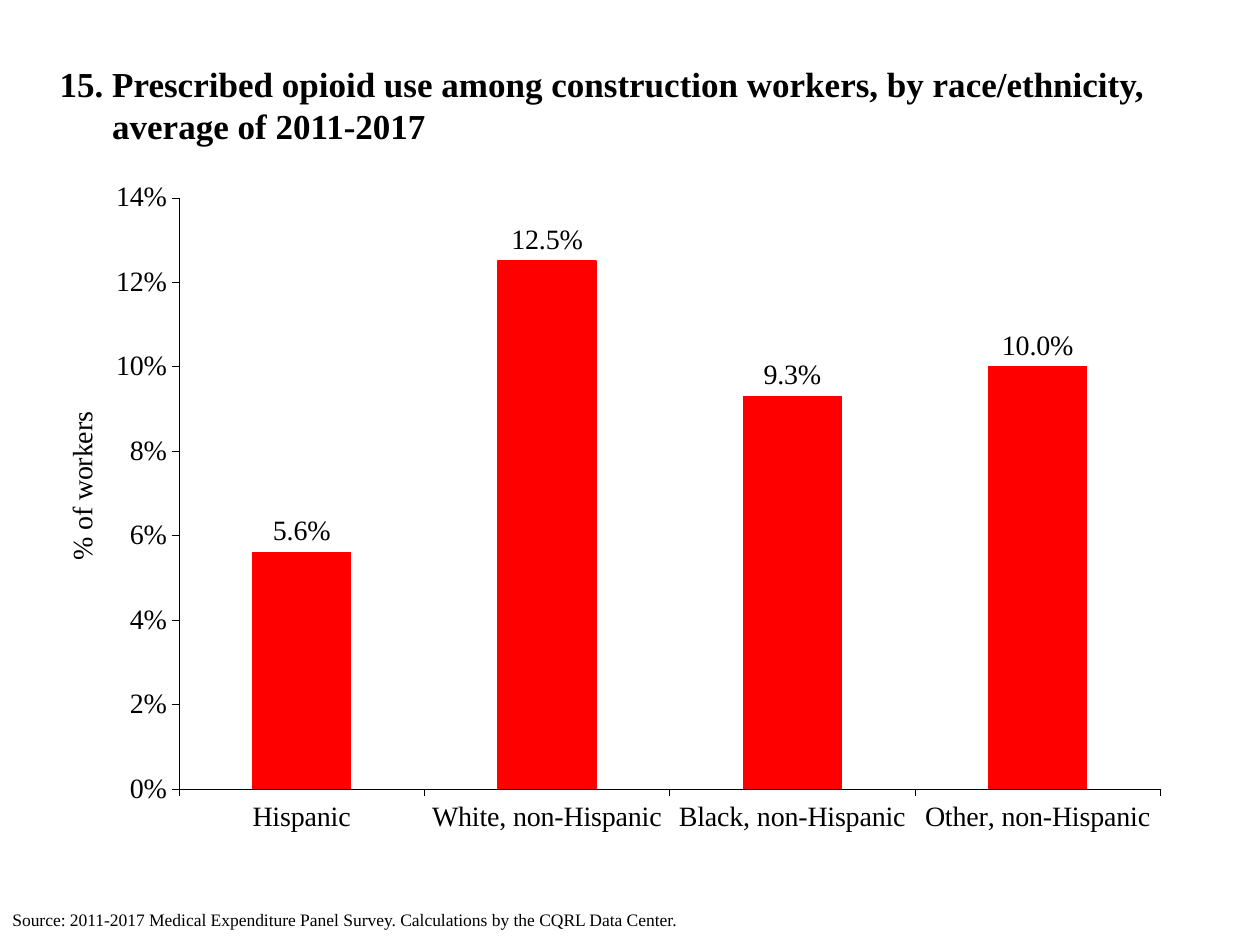
"""Build a slide with a column chart of prescribed opioid use by race/ethnicity."""
from lxml import etree
from pptx import Presentation
from pptx.chart.data import CategoryChartData
from pptx.dml.color import RGBColor
from pptx.enum.chart import XL_CHART_TYPE, XL_LABEL_POSITION, XL_TICK_MARK
from pptx.enum.text import MSO_ANCHOR
from pptx.oxml.ns import qn
from pptx.util import Pt

COLUMN = XL_CHART_TYPE.COLUMN_CLUSTERED
ABOVE = XL_LABEL_POSITION.OUTSIDE_END
OUT, NONE = XL_TICK_MARK.OUTSIDE, XL_TICK_MARK.NONE
MIDDLE, TOP = MSO_ANCHOR.MIDDLE, MSO_ANCHOR.TOP
FACE, BLACK, RED = "Times New Roman", "000000", "FF0000"

TITLE = ["15. Prescribed opioid use among construction workers, by race/ethnicity,",
         "average of 2011-2017"]
SOURCE = ["Source: 2011-2017 Medical Expenditure Panel Survey. "
          "Calculations by the CQRL Data Center."]
RATES = {"Hispanic": 0.056, "White, non-Hispanic": 0.125,
         "Black, non-Hispanic": 0.093, "Other, non-Hispanic": 0.1}
SCALE = {"minimum_scale": 0, "maximum_scale": 0.14, "major_unit": 0.02,
         "has_major_gridlines": False, "has_title": True}
TICKS = {"major_tick_mark": OUT, "minor_tick_mark": NONE}
LABELS = {"show_value": True, "number_format": "0.0%",
          "number_format_is_linked": False, "position": ABOVE}
PLOT = {"layoutTarget": "inner", "xMode": "edge", "yMode": "edge",
        "x": 0.113, "y": 0.027, "w": 0.842, "h": 0.828}
CAPTION = {"xMode": "edge", "yMode": "edge", "x": 0.01, "y": 0.32}


def tint(code):
    return RGBColor.from_string(code)


def apply(item, values):
    for name, value in values.items():
        setattr(item, name, value)


def style(font, size, bold=False):
    apply(font, {"name": FACE, "size": Pt(size), "bold": bold})
    font.color.rgb = tint(BLACK)


def add_text(slide, box, lines, size, bold=False, anchor=TOP, hang=0):
    frame = slide.shapes.add_textbox(*map(Pt, box)).text_frame
    apply(frame, {"word_wrap": True, "vertical_anchor": anchor})
    para = frame.paragraphs[0]
    para.text = "\v".join(lines)
    style(para.font, size, bold)
    for run in para.runs:
        style(run.font, size, bold)
    if hang:
        props = para._p.get_or_add_pPr()
        props.set("marL", str(Pt(hang)))
        props.set("indent", str(-Pt(hang)))


def set_layout(parent, before, values):
    for old in parent.findall(qn("c:layout")):
        parent.remove(old)
    layout = etree.Element(qn("c:layout"))
    manual = etree.SubElement(layout, qn("c:manualLayout"))
    for name, value in values.items():
        etree.SubElement(manual, qn("c:" + name)).set("val", str(value))
    parent.find(qn(before)).addprevious(layout)


def add_rates(slide, box):
    data = CategoryChartData(number_format="0.0%")
    data.categories = list(RATES)
    data.add_series("Series 1", list(RATES.values()))
    chart = slide.shapes.add_chart(COLUMN, *map(Pt, box), data).chart
    apply(chart, {"has_legend": False, "has_title": False})
    style(chart.font, 16)

    plot = chart.plots[0]
    apply(plot, {"gap_width": 150, "vary_by_categories": False, "has_data_labels": True})
    apply(plot.data_labels, LABELS)
    style(plot.data_labels.font, 16)
    bars = plot.series[0].format
    bars.fill.solid()
    bars.fill.fore_color.rgb = bars.line.color.rgb = tint(RED)
    bars.line.width = Pt(0.75)

    rate = chart.value_axis
    for axis in (rate, chart.category_axis):
        apply(axis, TICKS)
        style(axis.tick_labels.font, 16)
        axis.format.line.color.rgb = tint(BLACK)
        axis.format.line.width = Pt(0.25)
    apply(rate, SCALE)
    apply(rate.tick_labels, {"number_format": "0%", "number_format_is_linked": False})
    frame = rate.axis_title.text_frame
    frame.text = "% of workers"
    style(frame.paragraphs[0].runs[0].font, 16)
    frame._txBody.find(qn("a:bodyPr")).set("rot", "-5400000")
    set_layout(rate.axis_title._element, "c:overlay", CAPTION)
    set_layout(chart._chartSpace.chart.plotArea, "c:barChart", PLOT)


def main():
    deck = Presentation()
    deck.slide_width, deck.slide_height = Pt(720), Pt(540)
    slide = deck.slides.add_slide(deck.slide_layouts[6])
    add_text(slide, (27, 24, 666, 72), TITLE, 20, True, MIDDLE, 30)
    add_rates(slide, (27, 102, 666, 408))
    add_text(slide, (0, 516, 720, 19.5), SOURCE, 10)
    deck.save("out.pptx")


if __name__ == "__main__":
    main()
